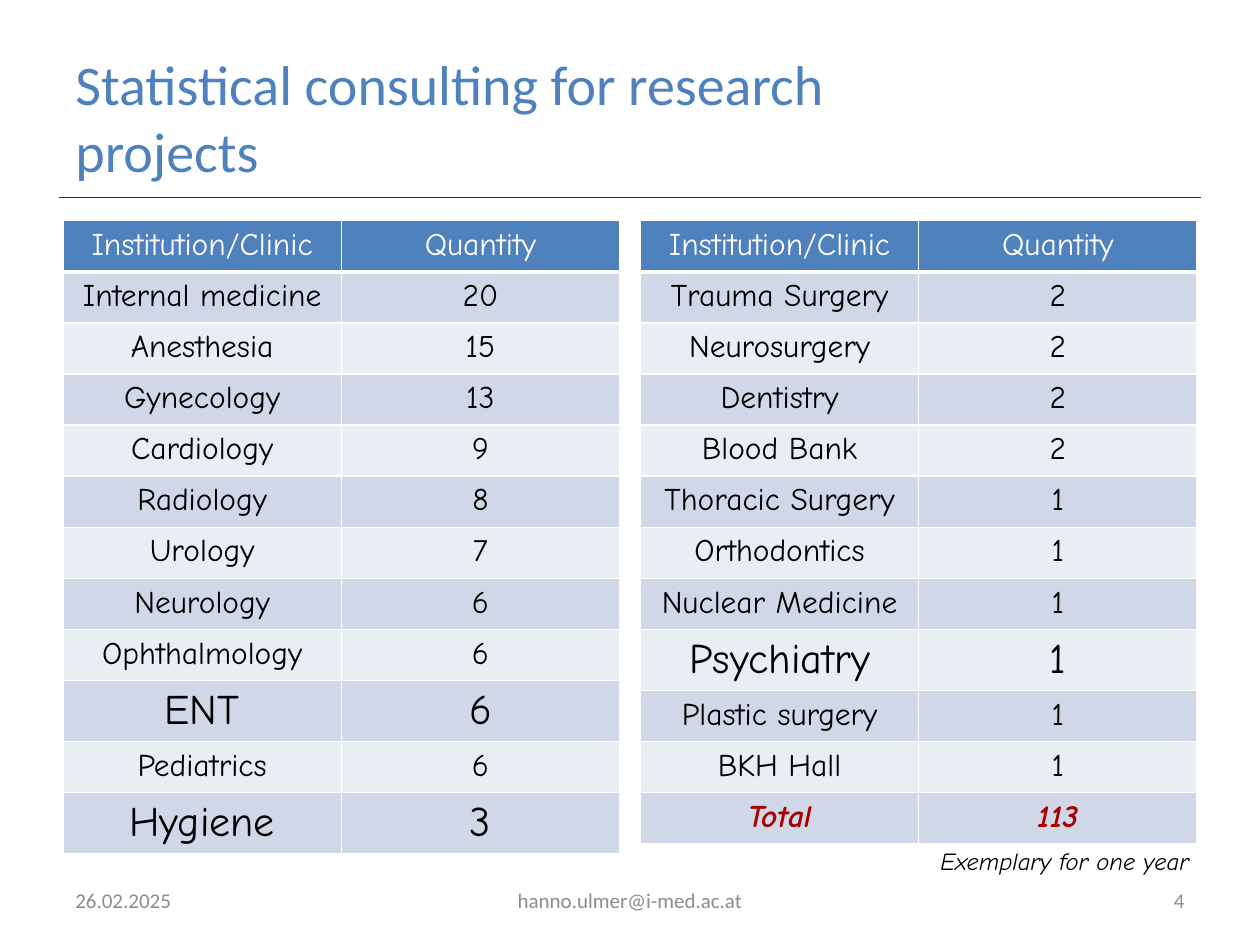
from dataclasses import dataclass

from lxml import etree
from pptx import Presentation
from pptx.dml.color import RGBColor
from pptx.enum.shapes import MSO_CONNECTOR
from pptx.enum.text import MSO_ANCHOR, PP_ALIGN
from pptx.oxml.ns import qn
from pptx.util import Cm, Pt

LEFT, CENTER, RIGHT = PP_ALIGN.LEFT, PP_ALIGN.CENTER, PP_ALIGN.RIGHT
TOP, MIDDLE = MSO_ANCHOR.TOP, MSO_ANCHOR.MIDDLE
STRAIGHT = MSO_CONNECTOR.STRAIGHT

COLORS = {
    "blue": "4F81BD", "band_dark": "D0D8E8", "band_light": "E9EDF4",
    "white": "FFFFFF", "black": "000000", "red": "AC0000", "gray": "8C8C8C",
}
BODY_FONT, TABLE_FONT = "Calibri", "Comic Neue"
COL_WIDTH, ROW_HEIGHT, TABLE_TOP = 5.61, 1.03, 4.45
HEADER = ("Institution/Clinic", "Quantity")
LARGE_ROWS = {"ENT", "Hygiene", "Psychiatry"}


@dataclass
class Label:
    text: str
    left: float
    top: float
    width: float
    height: float
    size: int
    color: str
    font: str = BODY_FONT
    align: PP_ALIGN = LEFT
    anchor: MSO_ANCHOR = MIDDLE
    italic: bool = False


@dataclass
class CountTable:
    left: float
    rows: list[tuple[str, int]]


LABELS = [
    Label("Statistical consulting for research projects",
          1.27, 0.76, 17.37, 3.18, 32, "blue"),
    Label("4", 18.2, 17.65, 5.93, 1.01, 12, "gray", align=RIGHT),
    Label("Exemplary for one year", 14.3, 16.94, 9.93, 0.86, 14, "black",
          TABLE_FONT, RIGHT, TOP, True),
    Label("26.02.2025", 1.27, 17.65, 5.93, 1.01, 12, "gray"),
    Label("hanno.ulmer@i-med.ac.at", 8.68, 17.65, 8.04, 1.01, 12, "gray",
          align=CENTER),
]

TABLES = [
    CountTable(1.27, [
        ("Internal medicine", 20), ("Anesthesia", 15), ("Gynecology", 13),
        ("Cardiology", 9), ("Radiology", 8), ("Urology", 7), ("Neurology", 6),
        ("Ophthalmology", 6), ("ENT", 6), ("Pediatrics", 6), ("Hygiene", 3),
    ]),
    CountTable(12.91, [
        ("Trauma Surgery", 2), ("Neurosurgery", 2), ("Dentistry", 2),
        ("Blood Bank", 2), ("Thoracic Surgery", 1), ("Orthodontics", 1),
        ("Nuclear Medicine", 1), ("Psychiatry", 1), ("Plastic surgery", 1),
        ("BKH Hall", 1), ("Total", 113),
    ]),
]


def rgb(name: str) -> RGBColor:
    return RGBColor.from_string(COLORS[name])


def write(tf, text: str, align: PP_ALIGN, color: str, **fmt) -> None:
    p = tf.paragraphs[0]
    p.alignment = align
    r = p.add_run()
    r.text = text
    for key, value in fmt.items():
        setattr(r.font, key, value)
    r.font.color.rgb = rgb(color)


def add_label(s, label: Label) -> None:
    box = s.shapes.add_textbox(Cm(label.left), Cm(label.top),
                               Cm(label.width), Cm(label.height))
    tf = box.text_frame
    tf.word_wrap = True
    tf.vertical_anchor = label.anchor
    write(tf, label.text, label.align, label.color, name=label.font,
          size=Pt(label.size), italic=label.italic)


def add_borders(cell, bottom: int) -> None:
    """Draw white borders, 1 pt wide except for the given bottom width."""
    tc_pr = cell._tc.get_or_add_tcPr()
    for side, width in (("L", 1), ("R", 1), ("T", 1), ("B", bottom)):
        ln = etree.SubElement(tc_pr, qn(f"a:ln{side}"), w=str(Pt(width)))
        fill = etree.SubElement(ln, qn("a:solidFill"))
        etree.SubElement(fill, qn("a:srgbClr"), val=COLORS["white"])


def add_count_table(s, spec: CountTable) -> None:
    rows = [HEADER, *spec.rows]
    table = s.shapes.add_table(
        len(rows), len(HEADER), Cm(spec.left), Cm(TABLE_TOP),
        Cm(COL_WIDTH * len(HEADER)), Cm(ROW_HEIGHT * len(rows))).table
    for i, row in enumerate(rows):
        is_header, is_total = i == 0, row[0] == "Total"
        fill = "blue" if is_header else "band_dark" if i % 2 else "band_light"
        color = "white" if is_header else "red" if is_total else "black"
        size = Pt(24 if row[0] in LARGE_ROWS else 18)
        for j, value in enumerate(row):
            cell = table.cell(i, j)
            add_borders(cell, 3 if is_header else 1)
            cell.fill.solid()
            cell.fill.fore_color.rgb = rgb(fill)
            write(cell.text_frame, str(value), CENTER, color, name=TABLE_FONT,
                  size=size, bold=is_total, italic=is_total)


def add_title_rule(s) -> None:
    line = s.shapes.add_connector(STRAIGHT, Cm(1.19), Cm(3.97),
                                  Cm(24.21), Cm(3.97))
    line.line.color.rgb = rgb("red")
    line.line.width = Pt(0.25)
    etree.SubElement(line._element.spPr, qn("a:effectLst"))


def main() -> None:
    prs = Presentation()
    prs.slide_width, prs.slide_height = Cm(25.4), Cm(19.05)
    s = prs.slides.add_slide(prs.slide_layouts[6])
    add_title_rule(s)
    for spec in TABLES:
        add_count_table(s, spec)
    for label in LABELS:
        add_label(s, label)
    prs.save("out.pptx")


if __name__ == "__main__":
    main()
